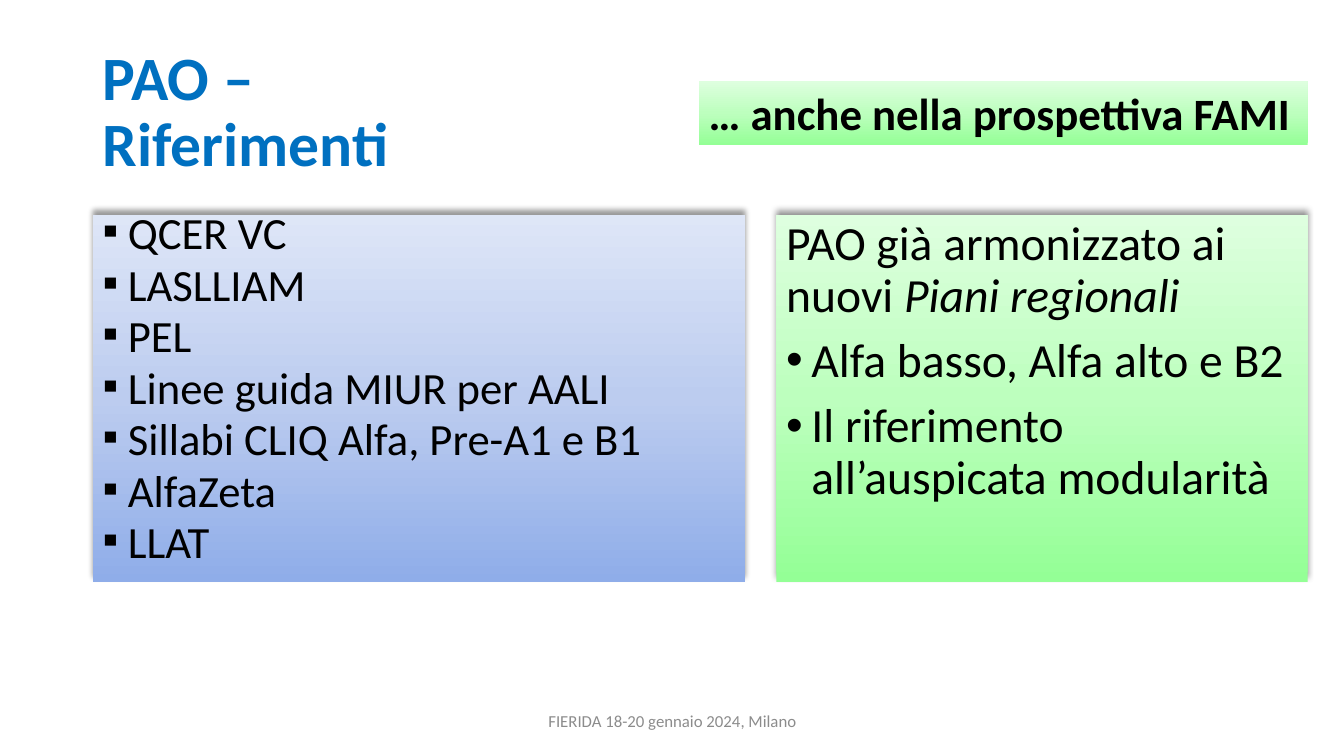
from copy import deepcopy

from lxml import etree
from pptx import Presentation
from pptx.dml.color import RGBColor
from pptx.enum.shapes import MSO_SHAPE
from pptx.enum.text import MSO_ANCHOR, MSO_AUTO_SIZE, PP_ALIGN
from pptx.oxml.ns import qn
from pptx.util import Inches, Pt

RECTANGLE = MSO_SHAPE.RECTANGLE
TOP, MIDDLE = MSO_ANCHOR.TOP, MSO_ANCHOR.MIDDLE
LEFT, CENTER = PP_ALIGN.LEFT, PP_ALIGN.CENTER
FIT_SHAPE = MSO_AUTO_SIZE.SHAPE_TO_FIT_TEXT

COLORS = {"title": "0070C0", "text": "000000", "footer": "8C8C8C", "shadow": "000000"}
GRADIENTS = {
    "blue": ("8FADE9", "BCCCEF", "DEE6F7"),
    "green": ("94FF96", "BDFFBE", "DEFFDF"),
}


class SlideBuilder:
    """Holds the style and the current slide."""

    font_name = "Calibri"
    bullet_indent = Inches(0.25)

    def __init__(self, presentation):
        self.slide = presentation.slides.add_slide(presentation.slide_layouts[6])

    def text_box(self, box, paragraphs, anchor=MIDDLE, **style):
        shape = self.slide.shapes.add_textbox(*map(Inches, box))
        self.add_text(shape, paragraphs, anchor, **style)

    def panel(self, box, gradient, paragraphs, shadow=True, **style):
        shape = self.slide.shapes.add_shape(RECTANGLE, *map(Inches, box))
        shape.line.fill.background()
        shape.shadow.inherit = False
        self.fill_gradient(shape, GRADIENTS[gradient])
        if shadow:
            self.add_shadow(shape)
        self.add_text(shape, paragraphs, TOP, **style)
        return shape

    def fill_gradient(self, shape, colors):
        shape.fill.gradient()
        shape.fill.gradient_angle = 90
        stop_list = shape._element.spPr.find(qn("a:gradFill")).find(qn("a:gsLst"))
        stop_list.append(deepcopy(stop_list[0]))
        for index, (stop, color) in enumerate(zip(shape.fill.gradient_stops, colors)):
            stop.position = index / 2
            stop.color.rgb = RGBColor.from_string(color)

    def add_shadow(self, shape):
        effects = shape._element.spPr.find(qn("a:effectLst"))
        shadow = etree.SubElement(
            effects, qn("a:outerShdw"), blurRad=str(Pt(4)), dist=str(Pt(3)),
            dir="16200000", rotWithShape="0")
        color = etree.SubElement(shadow, qn("a:srgbClr"), val=COLORS["shadow"])
        etree.SubElement(color, qn("a:alpha"), val="40000")

    def add_text(self, shape, paragraphs, anchor, wrap=True, size=32, color="text",
                 bold=False, **paragraph_style):
        """Each paragraph is a bullet character and a list of (text, italic) runs."""
        frame = shape.text_frame
        frame.word_wrap = wrap
        frame.vertical_anchor = anchor
        paragraph_format = {"alignment": LEFT, **paragraph_style}
        for index, (bullet, runs) in enumerate(paragraphs):
            paragraph = frame.add_paragraph() if index else frame.paragraphs[0]
            for name, value in paragraph_format.items():
                setattr(paragraph, name, value)
            if bullet:
                self.add_bullet(paragraph, bullet)
            for text, italic in runs:
                run = paragraph.add_run()
                run.text = text
                font_format = {"name": self.font_name, "size": Pt(size),
                               "bold": bold, "italic": italic}
                for name, value in font_format.items():
                    setattr(run.font, name, value)
                run.font.color.rgb = RGBColor.from_string(COLORS[color])

    def add_bullet(self, paragraph, character):
        properties = paragraph._p.get_or_add_pPr()
        properties.set("marL", str(self.bullet_indent))
        properties.set("indent", str(-self.bullet_indent))
        etree.SubElement(properties, qn("a:buFont"), typeface="Arial")
        etree.SubElement(properties, qn("a:buChar"), char=character)


def plain(text, bullet=None):
    return bullet, [(text, False)]


def main():
    presentation = Presentation()
    presentation.slide_width = Inches(13.33)
    presentation.slide_height = Inches(7.5)
    builder = SlideBuilder(presentation)

    # Title
    builder.text_box((0.92, 0.4, 4.51, 1.45), [plain("PAO – Riferimenti")],
                     size=44, color="title", bold=True, line_spacing=0.9)

    # Reference list
    references = ["QCER VC", "LASLLIAM", "PEL", "Linee guida MIUR per AALI",
                  "Sillabi CLIQ Alfa, Pre-A1 e B1", "AlfaZeta", "LLAT"]
    builder.panel((0.92, 2.13, 6.47, 3.64), "blue",
                  [plain(reference, "▪") for reference in references],
                  size=31.9, line_spacing=0.7, space_before=Pt(10))

    # FAMI banner
    banner = builder.panel((6.93, 0.8, 6.04, 0.64), "green",
                           [plain("… anche nella prospettiva FAMI")],
                           shadow=False, wrap=False, bold=True)
    banner.text_frame.auto_size = FIT_SHAPE

    # Regional plans
    regional_plans = [
        (None, [("PAO già armonizzato ai nuovi ", False), ("Piani regionali", True)]),
        plain("Alfa basso, Alfa alto e B2", "•"),
        plain("Il riferimento all’auspicata modularità", "•"),
    ]
    builder.panel((7.7, 2.13, 5.27, 3.64), "green", regional_plans,
                  size=34, line_spacing=0.9, space_before=Pt(10))

    # Footer
    builder.text_box((4.42, 6.95, 4.5, 0.4), [plain("FIERIDA 18-20 gennaio 2024, Milano")],
                     size=12, color="footer", alignment=CENTER)

    presentation.save("out.pptx")


if __name__ == "__main__":
    main()
